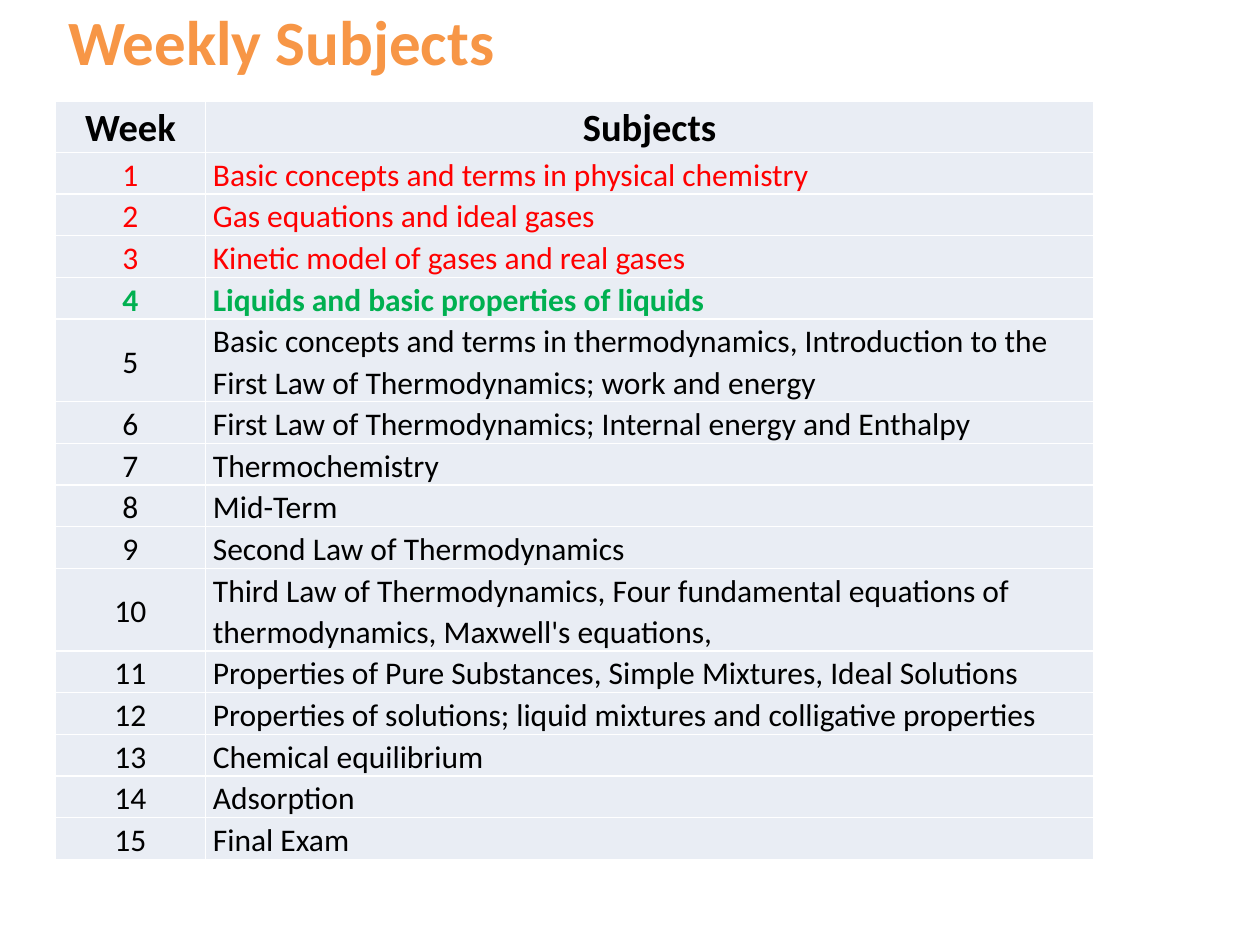
"""Build the weekly subjects slide of a physical chemistry course."""

import dataclasses

import lxml.etree
import pptx
import pptx.dml.color
import pptx.enum.text
import pptx.oxml.ns
import pptx.slide
import pptx.table
import pptx.util

Pt = pptx.util.Pt
Align = pptx.enum.text.PP_ALIGN
Anchor = pptx.enum.text.MSO_ANCHOR

FONT = "Calibri"
ORANGE, RED, GREEN = "F79646", "FF0000", "00B050"
BLACK, WHITE, PALE = "000000", "FFFFFF", "E9EDF4"
LEFT = 31.7
COLUMN_WIDTHS = (85.7, 507.6)
HEADER_HEIGHT, LINE_HEIGHT = 29.5, 23.6


@dataclasses.dataclass(frozen=True)
class Entry:
    week: str
    subject: str
    color: str = BLACK
    bold: bool = False
    size: float = 18
    lines: int = 1
    subject_align: Align = Align.LEFT

    @property
    def height(self) -> float:
        return HEADER_HEIGHT if self.size > 18 else LINE_HEIGHT * self.lines


HEADER = Entry("Week", "Subjects", bold=True, size=22, subject_align=Align.CENTER)
ENTRIES = [
    HEADER,
    Entry("1", "Basic concepts and terms in physical chemistry", RED),
    Entry("2", "Gas equations and ideal gases", RED),
    Entry("3", "Kinetic model of gases and real gases", RED),
    Entry("4", "Liquids and basic properties of liquids", GREEN, bold=True),
    Entry("5", "Basic concepts and terms in thermodynamics, Introduction to the "
          "First Law of Thermodynamics; work and energy", lines=2),
    Entry("6", "First Law of Thermodynamics; Internal energy and Enthalpy"),
    Entry("7", "Thermochemistry"),
    Entry("8", "Mid-Term"),
    Entry("9", "Second Law of Thermodynamics"),
    Entry("10", "Third Law of Thermodynamics, Four fundamental equations of "
          "thermodynamics, Maxwell's equations,", lines=2),
    Entry("11", "Properties of Pure Substances, Simple Mixtures, Ideal Solutions"),
    Entry("12", "Properties of solutions; liquid mixtures and colligative properties"),
    Entry("13", "Chemical equilibrium"),
    Entry("14", "Adsorption"),
    Entry("15", "Final Exam"),
]


def rgb(color: str) -> pptx.dml.color.RGBColor:
    return pptx.dml.color.RGBColor.from_string(color)


def format_font(font, size: float, color: str, bold: bool) -> None:
    font.name, font.size, font.bold = FONT, Pt(size), bold
    font.color.rgb = rgb(color)


def add_borders(cell: pptx.table._Cell) -> None:
    qn = pptx.oxml.ns.qn
    properties = cell._tc.get_or_add_tcPr()
    for index, side in enumerate(("lnL", "lnR", "lnT", "lnB")):
        line = lxml.etree.Element(qn(f"a:{side}"), w=str(Pt(1)))
        fill = lxml.etree.SubElement(line, qn("a:solidFill"))
        lxml.etree.SubElement(fill, qn("a:srgbClr"), val=WHITE)
        properties.insert(index, line)


def fill_cell(cell: pptx.table._Cell, text: str, entry: Entry, align: Align) -> None:
    cell.fill.solid()
    cell.fill.fore_color.rgb = rgb(PALE)
    cell.vertical_anchor = Anchor.MIDDLE
    cell.margin_left = cell.margin_right = Pt(4.3)
    cell.margin_top, cell.margin_bottom = Pt(0.7), Pt(0)
    paragraph = cell.text_frame.paragraphs[0]
    paragraph.text = text
    paragraph.alignment = align
    paragraph.line_spacing = 1.07
    format_font(paragraph.runs[0].font, entry.size, entry.color, entry.bold)
    add_borders(cell)


def add_title(page: pptx.slide.Slide, text: str) -> None:
    title = page.shapes.title
    title.left, title.top = Pt(LEFT), Pt(-2.2)
    title.width, title.height = Pt(262), Pt(51)
    frame = title.text_frame
    frame.text = text
    frame.word_wrap = False
    frame.auto_size = pptx.enum.text.MSO_AUTO_SIZE.SHAPE_TO_FIT_TEXT
    frame.vertical_anchor = Anchor.TOP
    paragraph = frame.paragraphs[0]
    paragraph.alignment = Align.LEFT
    format_font(paragraph.runs[0].font, 36, ORANGE, True)


def add_schedule(page: pptx.slide.Slide, entries: list[Entry]) -> None:
    height = sum(entry.height for entry in entries)
    table = page.shapes.add_table(
        len(entries), len(COLUMN_WIDTHS),
        Pt(LEFT), Pt(57.6), Pt(sum(COLUMN_WIDTHS)), Pt(height),
    ).table
    table.first_row = table.horz_banding = False
    for column, width in zip(table.columns, COLUMN_WIDTHS):
        column.width = Pt(width)
    for row, entry in zip(table.rows, entries):
        row.height = Pt(entry.height)
        week, subject = row.cells
        fill_cell(week, entry.week, entry, Align.CENTER)
        fill_cell(subject, entry.subject, entry, entry.subject_align)


def main() -> None:
    deck = pptx.Presentation()
    deck.slide_width, deck.slide_height = Pt(720), Pt(540)
    page = deck.slides.add_slide(deck.slide_layouts.get_by_name("Title Only"))
    page.background.fill.solid()
    page.background.fill.fore_color.rgb = rgb(WHITE)
    add_title(page, "Weekly Subjects")
    add_schedule(page, ENTRIES)
    deck.save("out.pptx")


if __name__ == "__main__":
    main()
